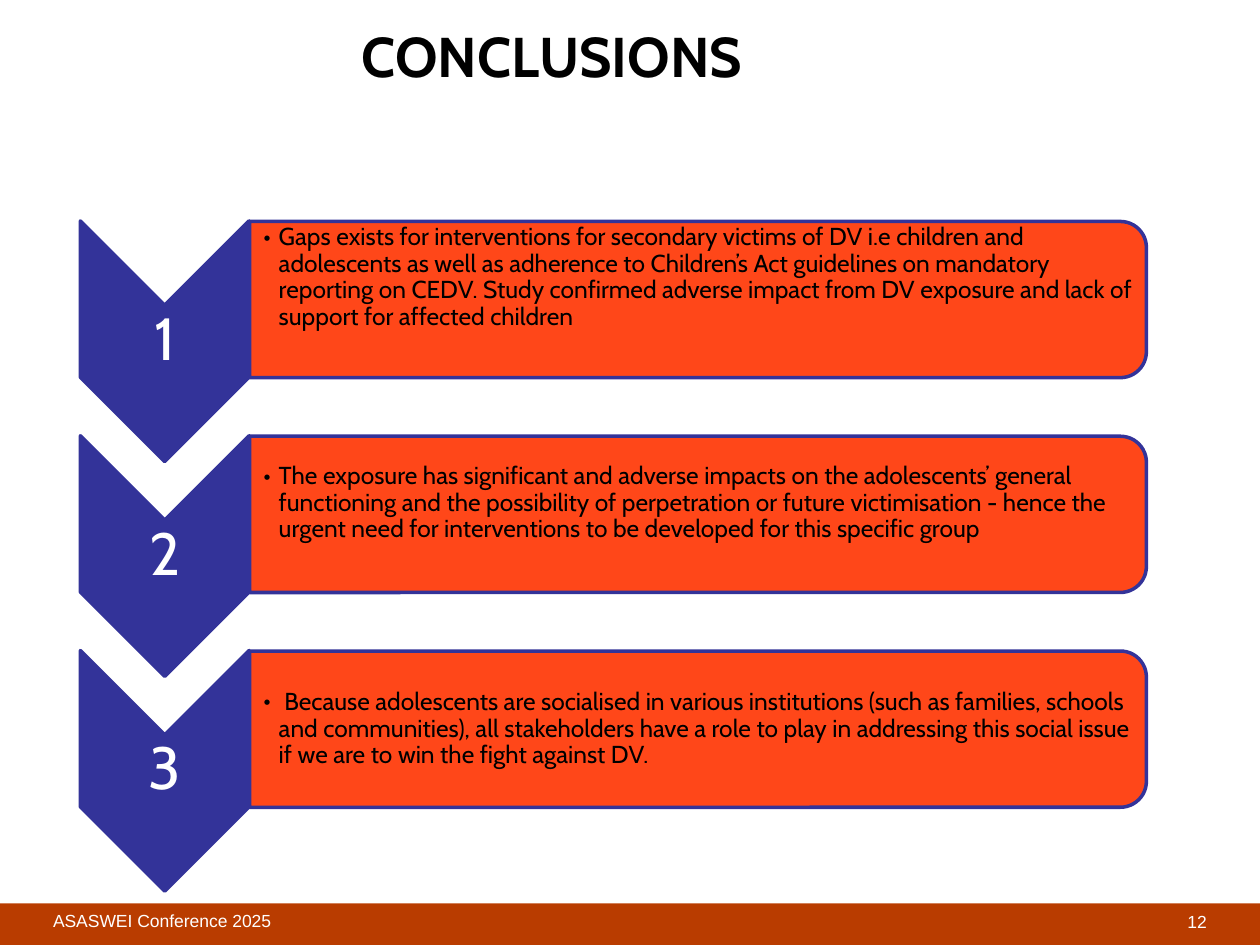
"""Build the conclusions slide: three numbered chevrons with text panels."""
from dataclasses import dataclass

import pptx
import pptx.dml.color
import pptx.enum.shapes
import pptx.enum.text
import pptx.oxml.ns
import pptx.util
from lxml import etree
from pptx.util import Cm

Shape = pptx.enum.shapes.MSO_SHAPE
Anchor = pptx.enum.text.MSO_ANCHOR
Align = pptx.enum.text.PP_ALIGN
qn = pptx.oxml.ns.qn


@dataclass(frozen=True)
class Theme:
    """Colours, fonts and type sizes of the slide."""
    navy: str = "333399"
    orange: str = "FF3300"
    rust: str = "B93C00"
    black: str = "000000"
    white: str = "FFFFFF"
    body_font: str = "Cabin"
    footer_font: str = "Arial"
    title_size: int = 32
    number_size: int = 34
    body_size: int = 14
    footer_size: int = 10
    panel_opacity: int = 90


@dataclass(frozen=True)
class Area:
    """A rectangle in centimetres."""
    left: float
    top: float
    width: float
    height: float

    def lengths(self) -> list:
        """Return left, top, width and height as lengths."""
        return [Cm(value) for value in (self.left, self.top, self.width, self.height)]


@dataclass(frozen=True)
class Conclusion:
    """One conclusion and how far its text sits above the panel's middle."""
    text: str
    lift: float


THEME = Theme()
ROW_PITCH = 4.33
CONCLUSIONS = [
    Conclusion("Gaps exists for interventions for secondary victims of DV i.e children and "
               "adolescents as well as adherence to Children’s Act guidelines on mandatory "
               "reporting on CEDV. Study confirmed adverse impact from DV exposure and lack of "
               "support for affected children", 0.44),
    Conclusion("The exposure has significant and adverse impacts on the adolescents’ general "
               "functioning and the possibility of perpetration or future victimisation - hence "
               "the urgent need for interventions to be developed for this specific group", 0.22),
    Conclusion(" Because adolescents are socialised in various institutions (such as families, "
               "schools and communities), all stakeholders have a role to play in addressing this "
               "social issue if we are to win the fight against DV.", 0),
]


def rgb(value: str) -> pptx.dml.color.RGBColor:
    """Return the colour for a hexadecimal value."""
    return pptx.dml.color.RGBColor.from_string(value)


def write(box, text: str, size: int, color: str, font: str = THEME.body_font,
          align=Align.LEFT, anchor=Anchor.TOP, insets=(0, 0, 0, 0), bullet: float = 0):
    """Put one formatted paragraph in a box and return it."""
    frame = box.text_frame
    frame.word_wrap = True
    frame.auto_size = pptx.enum.text.MSO_AUTO_SIZE.NONE
    frame.vertical_anchor = anchor
    (frame.margin_left, frame.margin_top,
     frame.margin_right, frame.margin_bottom) = map(Cm, insets)
    frame.text = text
    para = frame.paragraphs[0]
    para.alignment = align
    if bullet:
        properties = para._p.get_or_add_pPr()
        properties.set("marL", str(Cm(bullet)))
        properties.set("indent", str(-Cm(bullet)))
        etree.SubElement(properties, qn("a:buFont"), typeface=font)
        etree.SubElement(properties, qn("a:buChar"), char="•")
    para.font.name = font
    para.font.size = pptx.util.Pt(size)
    para.font.color.rgb = rgb(color)
    return para


def add_text(page, area: Area, text: str, size: int, color: str, **style):
    """Add a text box holding one paragraph and return the paragraph."""
    return write(page.shapes.add_textbox(*area.lengths()), text, size, color, **style)


def add_filled(page, kind, area: Area, fill: str):
    """Add a plain shape without outline or shadow."""
    shape = page.shapes.add_shape(kind, *area.lengths())
    shape.shadow.inherit = False
    shape.fill.solid()
    shape.fill.fore_color.rgb = rgb(fill)
    shape.line.fill.background()
    return shape


def add_turned(page, kind, center_x: float, center_y: float,
               width: float, height: float, fill: str):
    """Add an outlined shape turned clockwise by a quarter about its centre."""
    area = Area(center_x - width / 2, center_y - height / 2, width, height)
    shape = add_filled(page, kind, area, fill)
    shape.rotation = 90
    shape.line.color.rgb = rgb(THEME.navy)
    shape.line.width = pptx.util.Pt(2)
    return shape


def add_conclusion(page, index: int, conclusion: Conclusion) -> None:
    """Draw one numbered chevron with its panel."""
    offset = index * ROW_PITCH
    add_turned(page, Shape.CHEVRON, 3.32, 6.88 + offset, 4.85, 3.4, THEME.navy)
    panel = add_turned(page, Shape.ROUND_2_SAME_RECTANGLE, 14.07, 6.04 + offset,
                       3.15, 18.08, THEME.orange)
    tint = panel.fill._xPr.find(".//" + qn("a:srgbClr"))
    etree.SubElement(tint, qn("a:alpha"), val=str(THEME.panel_opacity * 1000))
    number = add_text(page, Area(1.62, 6.15 + offset, 3.4, 1.45), str(index + 1),
                      THEME.number_size, THEME.white, align=Align.CENTER,
                      anchor=Anchor.MIDDLE, insets=(0.05,) * 4)
    body = add_text(page, Area(5.03, 4.62 + offset - conclusion.lift, 17.93, 2.84),
                    conclusion.text, THEME.body_size, THEME.black,
                    anchor=Anchor.MIDDLE, insets=(0.28, 0.03, 0.03, 0.03), bullet=0.31)
    number.line_spacing = body.line_spacing = 0.9


def add_footer(page) -> None:
    """Draw the footer band with the event name and page number."""
    add_filled(page, Shape.RECTANGLE, Area(0, 18.21, 25.4, 0.84), THEME.rust)
    add_text(page, Area(1.07, 18.34, 10.59, 0.71), "ASASWEI Conference 2025",
             THEME.footer_size, THEME.white, font=THEME.footer_font)
    add_text(page, Area(19.05, 18.36, 5.28, 0.58), "12", THEME.footer_size,
             THEME.white, font=THEME.footer_font, align=Align.RIGHT)


def main() -> None:
    """Build and save the deck."""
    deck = pptx.Presentation()
    deck.slide_width, deck.slide_height = Cm(25.4), Cm(19.05)
    page = deck.slides.add_slide(deck.slide_layouts.get_by_name("Title Only"))
    title = page.shapes.title
    title.left, title.top, title.width, title.height = Area(1.07, 0.43, 20.12, 3.18).lengths()
    heading = write(title, "CONCLUSIONS", THEME.title_size, THEME.black, align=Align.CENTER)
    heading.font.bold = True
    add_footer(page)
    for index, conclusion in enumerate(CONCLUSIONS):
        add_conclusion(page, index, conclusion)
    deck.save("out.pptx")


if __name__ == "__main__":
    main()
